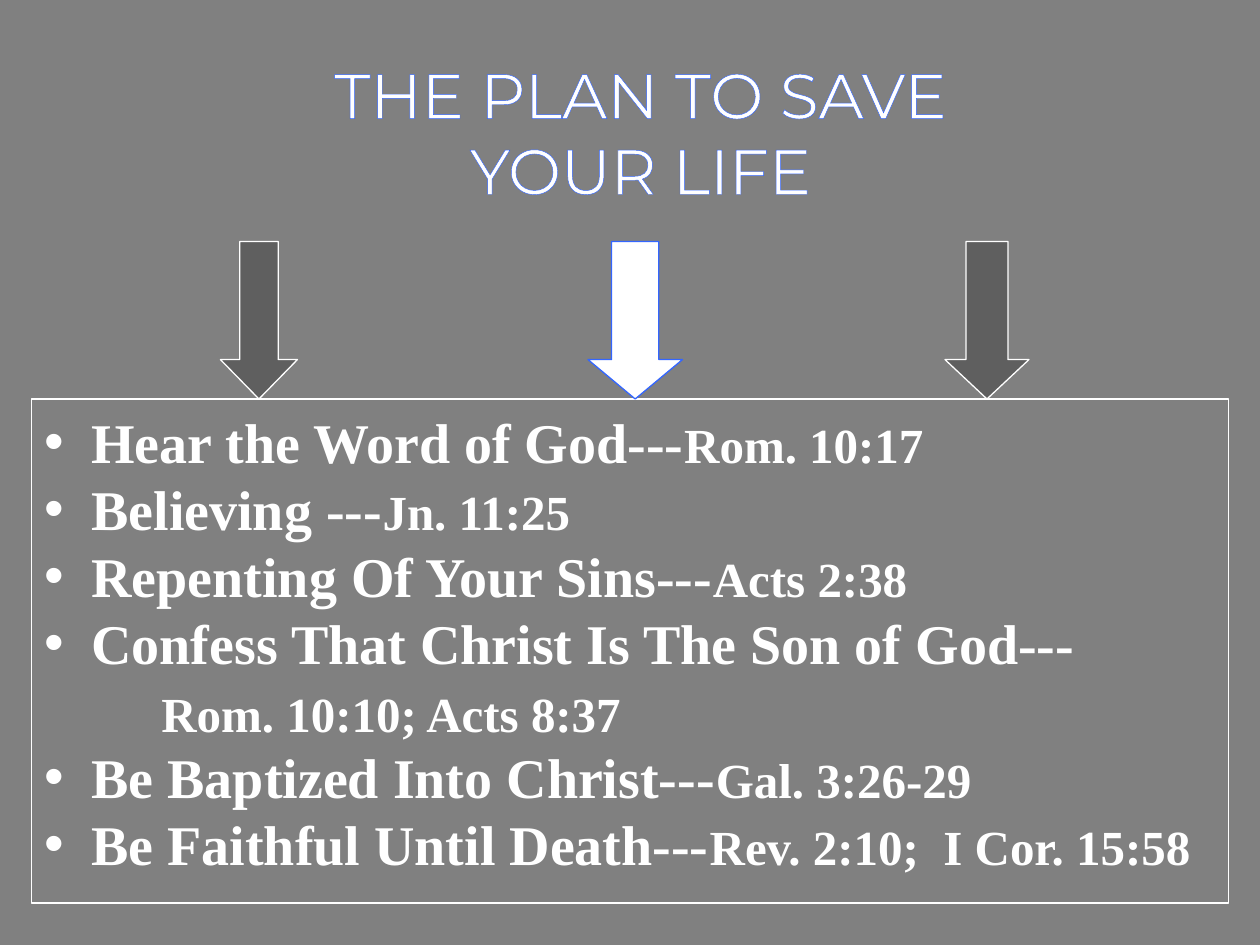
from lxml.etree import SubElement
from pptx import Presentation
from pptx.dml.color import RGBColor
from pptx.enum.shapes import MSO_SHAPE
from pptx.enum.text import MSO_ANCHOR, MSO_AUTO_SIZE, PP_ALIGN
from pptx.oxml import parse_xml
from pptx.oxml.ns import nsdecls, qn
from pptx.util import Pt

COLORS = {"background": "808080", "white": "FFFFFF", "blue": "3366FF", "gray": "5F5F5F"}
TITLE_LINES = ["THE PLAN TO SAVE", "YOUR LIFE"]
STEPS = [
    ("Hear the Word of God---", "Rom. 10:17"),
    ("Believing ---", "Jn. 11:25"),
    ("Repenting Of Your Sins---", "Acts 2:38"),
    ("Confess That Christ Is The Son of God---", ""),
    ("", "Rom. 10:10; Acts 8:37"),
    ("Be Baptized Into Christ---", "Gal. 3:26-29"),
    ("Be Faithful Until Death---", "Rev. 2:10;  I Cor. 15:58"),
]
ARROWS = [
    (126, 44, "gray", "white"),
    (540, 48, "gray", "white"),
    (336, 54, "white", "blue"),
]
ARROW_TOP, ARROW_HEIGHT, ARROW_HEAD = 138, 90, 22.5
STEPS_TOP = ARROW_TOP + ARROW_HEIGHT
BULLET_INDENT, REFERENCE_INDENT = 27, 67


def color(name):
    return RGBColor.from_string(COLORS[name])


def place(shape, left, top, width, height):
    shape.left, shape.top = Pt(left), Pt(top)
    shape.width, shape.height = Pt(width), Pt(height)


def set_line(shape, name):
    shape.line.color.rgb = color(name)
    shape.line.width = Pt(0.75)


def format_run(run, font_name, size, bold):
    run.font.name = font_name
    run.font.size = Pt(size)
    run.font.bold = bold
    run.font.color.rgb = color("white")


def outline_run(run, name):
    outline = parse_xml(
        f'<a:ln {nsdecls("a")} w="{Pt(0.75)}"><a:solidFill>'
        f'<a:srgbClr val="{COLORS[name]}"/></a:solidFill></a:ln>'
    )
    run.font._element.insert(0, outline)


def fill_title(title):
    place(title, 84, 24, 564, 102)
    frame = title.text_frame
    frame.text = "\n".join(TITLE_LINES)
    frame.word_wrap = False
    frame.auto_size = MSO_AUTO_SIZE.NONE
    frame.vertical_anchor = MSO_ANCHOR.MIDDLE
    for paragraph in frame.paragraphs:
        paragraph.alignment = PP_ALIGN.CENTER
        for run in paragraph.runs:
            format_run(run, "Montserrat", 36, False)
            outline_run(run, "blue")


def fill_steps(body):
    place(body, 18, STEPS_TOP, 684, 288)
    set_line(body, "white")
    frame = body.text_frame
    frame.text = "\n".join(step + reference for step, reference in STEPS)
    frame.auto_size = MSO_AUTO_SIZE.NONE
    frame.vertical_anchor = MSO_ANCHOR.TOP
    frame.margin_top = Pt(5)
    for paragraph, (step, reference) in zip(frame.paragraphs, STEPS):
        paragraph.text = ""
        paragraph.space_before = Pt(0)
        paragraph.line_spacing = Pt(38.3)
        properties = paragraph._p.get_or_add_pPr()
        indent = BULLET_INDENT if step else REFERENCE_INDENT
        properties.set("marL", str(Pt(indent)))
        properties.set("indent", str(Pt(-BULLET_INDENT if step else 0)))
        if step:
            SubElement(properties, qn("a:buChar")).set("char", "•")
        else:
            SubElement(properties, qn("a:buNone"))
        for text, size in ((step, 32), (reference, 28)):
            if text:
                run = paragraph.add_run()
                run.text = text
                format_run(run, "Times New Roman", size, True)


def add_arrow(slide, left, width, fill, line):
    arrow = slide.shapes.add_shape(
        MSO_SHAPE.DOWN_ARROW, Pt(left), Pt(ARROW_TOP), Pt(width), Pt(ARROW_HEIGHT)
    )
    arrow.adjustments[0] = 0.5
    arrow.adjustments[1] = ARROW_HEAD / width
    arrow.shadow.inherit = False
    arrow.fill.solid()
    arrow.fill.fore_color.rgb = color(fill)
    set_line(arrow, line)


def main():
    deck = Presentation()
    deck.slide_width, deck.slide_height = Pt(720), Pt(540)
    slide = deck.slides.add_slide(deck.slide_layouts[1])
    slide.background.fill.solid()
    slide.background.fill.fore_color.rgb = color("background")
    fill_title(slide.shapes.title)
    fill_steps(slide.placeholders[1])
    for arrow in ARROWS:
        add_arrow(slide, *arrow)
    deck.save("out.pptx")


if __name__ == "__main__":
    main()
